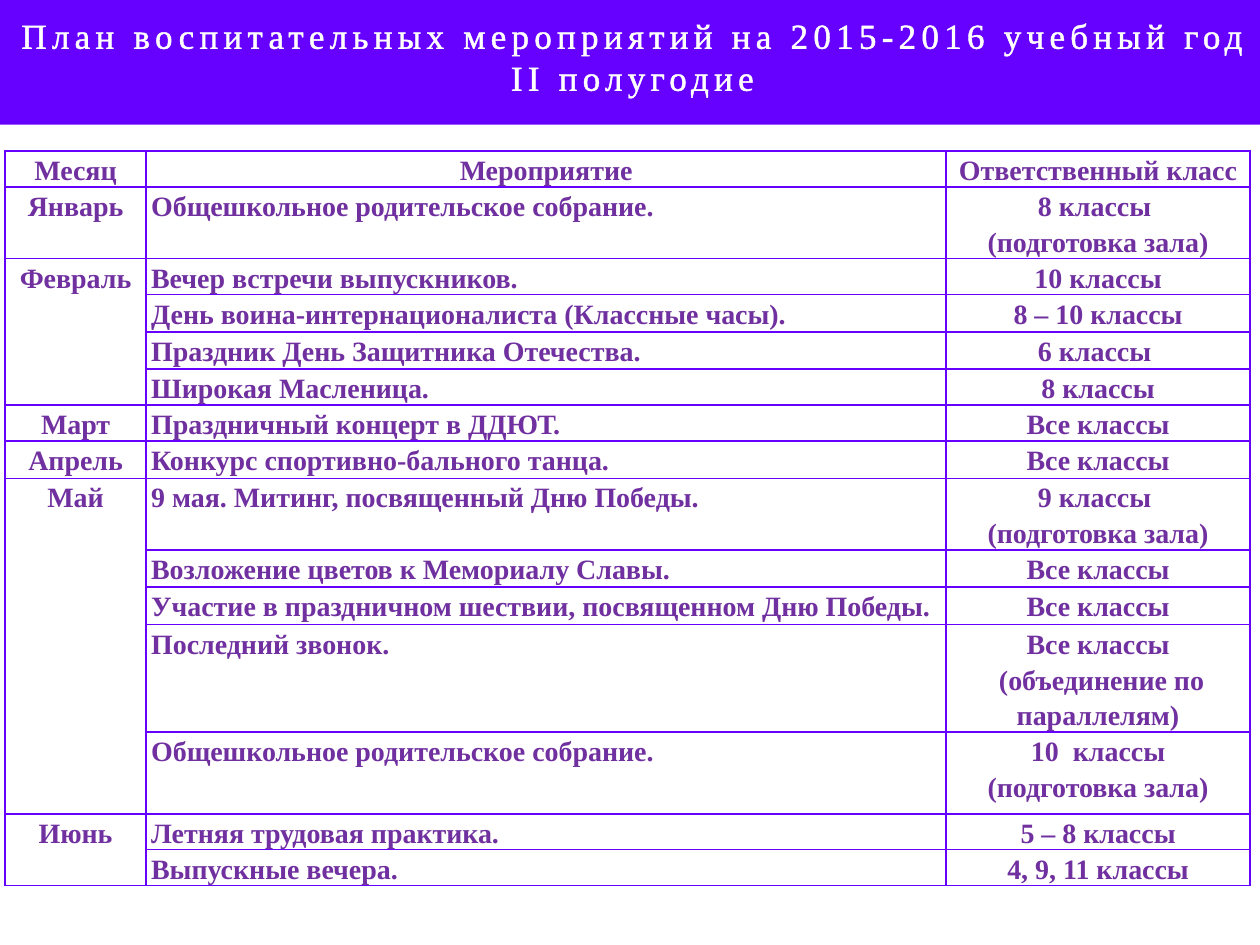
from lxml.etree import SubElement
from pptx import Presentation
from pptx.dml.color import RGBColor
from pptx.enum.shapes import MSO_SHAPE
from pptx.enum.text import MSO_AUTO_SIZE, PP_ALIGN
from pptx.oxml.ns import qn
from pptx.util import Pt

VIOLET = RGBColor(0x66, 0x00, 0xFF)
PURPLE = RGBColor(0x70, 0x30, 0xA0)
NAVY = RGBColor(0x00, 0x20, 0x60)
WHITE = RGBColor(0xFF, 0xFF, 0xFF)
FONT = "Times New Roman"

TITLE = "План воспитательных мероприятий на 2015-2016 учебный год\nII полугодие"
HEADINGS = ("Месяц", "Мероприятие", "Ответственный класс")
PLAN = [
    ("Январь", [
        ("Общешкольное родительское собрание. ", "8 классы \n(подготовка зала)", 31.7),
    ]),
    ("Февраль", [
        ("Вечер встречи выпускников.", "10 классы", 10.8),
        ("День воина-интернационалиста (Классные часы).", "8 – 10 классы", 21.4),
        ("Праздник День Защитника Отечества.", "6 классы ", 21.4),
        ("Широкая Масленица.", "8 классы", 10.8),
    ]),
    ("Март", [("Праздничный концерт в ДДЮТ.", "Все классы", 10.8)]),
    ("Апрель", [("Конкурс спортивно-бального танца.", "Все классы", 21.4)]),
    ("Май", [
        ("9 мая. Митинг, посвященный Дню Победы.", "9 классы \n(подготовка зала)", 31.7),
        ("Возложение цветов к Мемориалу Славы.", "Все классы", 21.4),
        ("Участие в праздничном шествии, посвященном Дню Победы.", "Все классы", 21.4),
        ("Последний звонок.", "Все классы\n (объединение по параллелям)", 42.5),
        ("Общешкольное родительское собрание. ", "10  классы\n(подготовка зала)", 46.8),
    ]),
    ("Июнь", [
        ("Летняя трудовая практика.", "5 – 8 классы", 10.8),
        ("Выпускные вечера.", "4, 9, 11 классы", 10.8),
    ]),
]
COLUMN_WIDTHS = (80.64, 457.2, 173.52)
HEADING_HEIGHT = 10.8
TABLE_HEIGHT = 444.24


def add_line_fill(line, color):
    fill = SubElement(line, qn("a:solidFill"))
    SubElement(fill, qn("a:srgbClr")).set("val", str(color))


def format_run(run, size, color, outline_color, outline_width):
    run.font.name = FONT
    run.font.size = Pt(size)
    run.font.color.rgb = color
    properties = run.font._element
    outline = SubElement(properties, qn("a:ln"), w=str(Pt(outline_width)))
    add_line_fill(outline, outline_color)
    properties.insert(0, outline)


def add_banner(slide):
    banner = slide.shapes.add_shape(MSO_SHAPE.RECTANGLE, 0, 0, Pt(720), Pt(71.3))
    banner.shadow.inherit = False
    banner.fill.solid()
    banner.fill.fore_color.rgb = VIOLET
    banner.line.fill.background()


def add_title(slide):
    frame = slide.shapes.add_textbox(Pt(2.9), Pt(4.3), Pt(717.1), Pt(55.7)).text_frame
    frame.word_wrap = True
    frame.auto_size = MSO_AUTO_SIZE.SHAPE_TO_FIT_TEXT
    frame.text = TITLE
    for paragraph in frame.paragraphs:
        paragraph.alignment = PP_ALIGN.CENTER
        for run in paragraph.runs:
            format_run(run, 20, WHITE, WHITE, 1.45)
            run.font._element.set("spc", "300")


def style_cell(cell):
    properties = cell._tc.get_or_add_tcPr()
    for edge in ("a:lnL", "a:lnR", "a:lnT", "a:lnB"):
        add_line_fill(SubElement(properties, qn(edge), w=str(Pt(1))), VIOLET)
    cell.fill.solid()
    cell.fill.fore_color.rgb = WHITE


def write_cell(cell, text, alignment=PP_ALIGN.CENTER, inset=2.88):
    cell.margin_left = cell.margin_right = Pt(inset)
    cell.margin_top = cell.margin_bottom = 0
    cell.text_frame.text = text
    for paragraph in cell.text_frame.paragraphs:
        paragraph.alignment = alignment
        paragraph.line_spacing = 1.15
        for run in paragraph.runs:
            format_run(run, 16, PURPLE, NAVY, 0.75)
            run.font.bold = True


def add_plan(slide):
    row_count = 1 + sum(len(events) for _, events in PLAN)
    frame = slide.shapes.add_table(
        row_count, len(HEADINGS), Pt(2.88), Pt(86.4), Pt(711.36), Pt(TABLE_HEIGHT))
    table = frame.table
    table.first_row = table.horz_banding = False
    for column, width in zip(table.columns, COLUMN_WIDTHS):
        column.width = Pt(width)
    for cell in table.iter_cells():
        style_cell(cell)

    table.rows[0].height = Pt(HEADING_HEIGHT)
    for column, heading in enumerate(HEADINGS):
        write_cell(table.cell(0, column), heading, inset=1.44)

    row = 1
    for month, events in PLAN:
        month_cell = table.cell(row, 0)
        if len(events) > 1:
            month_cell.merge(table.cell(row + len(events) - 1, 0))
        write_cell(month_cell, month)
        for event, classes, height in events:
            table.rows[row].height = Pt(height)
            write_cell(table.cell(row, 1), event, PP_ALIGN.JUSTIFY)
            write_cell(table.cell(row, 2), classes)
            row += 1
    frame.height = Pt(TABLE_HEIGHT)


def main():
    presentation = Presentation()
    presentation.slide_width = Pt(720)
    presentation.slide_height = Pt(540)
    slide = presentation.slides.add_slide(presentation.slide_layouts[6])
    add_banner(slide)
    add_plan(slide)
    add_title(slide)
    presentation.save("out.pptx")


if __name__ == "__main__":
    main()
